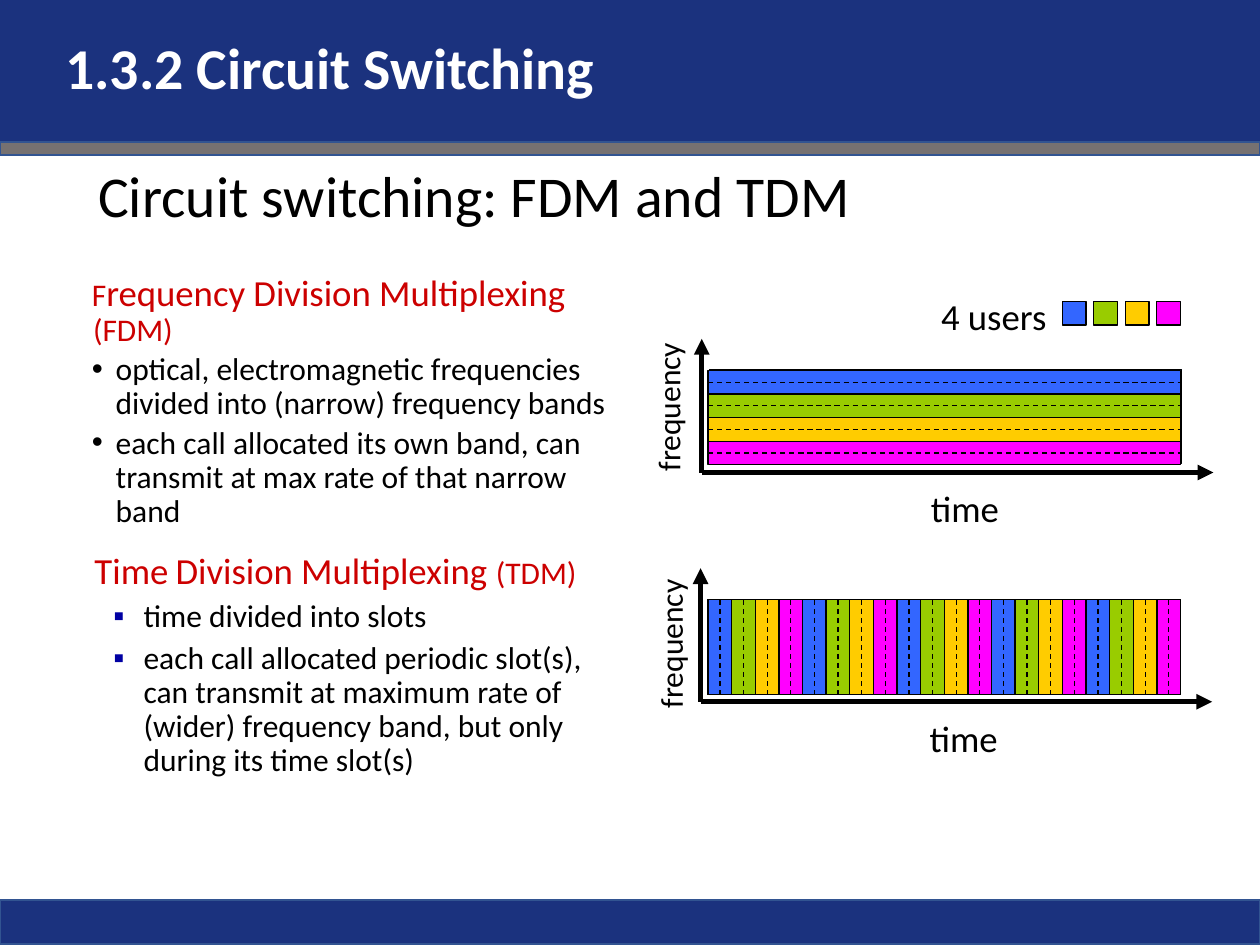
"""Build the slide that compares frequency and time division multiplexing."""
from lxml.etree import SubElement
from pptx import Presentation
from pptx.dml.color import RGBColor
from pptx.enum.dml import MSO_LINE
from pptx.enum.shapes import MSO_CONNECTOR, MSO_SHAPE
from pptx.enum.text import MSO_ANCHOR, MSO_AUTO_SIZE
from pptx.oxml.ns import qn
from pptx.util import Inches, Pt

COLORS = {
    "navy": "1B327E", "navy edge": "325491", "gray": "767171", "frame": "4472C4",
    "black": "000000", "white": "FFFFFF", "red": "CC0000", "bullet": "0000A3",
    "blue": "3366FF", "green": "99CC00", "yellow": "FFCC00", "pink": "FF00FF",
}
USERS = ["blue", "green", "yellow", "pink"]
COLUMNS, ROWS = 100, 75
PLOT_LEFT, PLOT_WIDTH, PLOT_HEIGHT = 56.2, 37.5, 7.5
SLOTS = 20


def grid(*cells):
    """Turn counts of grid cells into lengths."""
    return [Inches(cell * 10 / COLUMNS) for cell in cells]


def color(name):
    """Return the named colour."""
    return RGBColor.from_string(COLORS[name])


def add_box(shapes, place, fill, edge="black", weight=0.75):
    """Draw a filled rectangle, outlined unless edge is None."""
    shape = shapes.add_shape(MSO_SHAPE.RECTANGLE, *grid(*place))
    shape.shadow.inherit = False
    shape.fill.solid()
    shape.fill.fore_color.rgb = color(fill)
    if edge:
        shape.line.color.rgb = color(edge)
        shape.line.width = Pt(weight)
    else:
        shape.line.fill.background()
    return shape


def add_line(shapes, ends, weight=0.75, arrow=False):
    """Draw a straight black line, with an arrowhead on request."""
    connector = shapes.add_connector(MSO_CONNECTOR.STRAIGHT, *grid(*ends))
    connector.line.color.rgb = color("black")
    connector.line.width = Pt(weight)
    if arrow:
        SubElement(connector.line._get_or_add_ln(), qn("a:tailEnd"), type="triangle")
    SubElement(connector._element.spPr, qn("a:effectLst"))
    return connector


def add_runs(paragraph, runs, bold=False):
    """Add (text, size, colour) runs to a paragraph."""
    for text, size, name in runs:
        run = paragraph.add_run()
        run.text = text
        run.font.name = "Calibri"
        run.font.size = Pt(size)
        run.font.bold = bold
        run.font.color.rgb = color(name)


def add_label(shapes, place, text, size, rotation=0):
    """Add a one-line label that fits its text."""
    label = shapes.add_textbox(*grid(*place))
    label.rotation = rotation
    label.text_frame.word_wrap = False
    label.text_frame.auto_size = MSO_AUTO_SIZE.SHAPE_TO_FIT_TEXT
    add_runs(label.text_frame.paragraphs[0], [(text, size, "black")])


def add_title(slide, place, text, name, bold=False):
    """Add a vertically centred heading."""
    frame = slide.shapes.add_textbox(*grid(*place)).text_frame
    frame.word_wrap = True
    frame.vertical_anchor = MSO_ANCHOR.MIDDLE
    frame.paragraphs[0].line_spacing = 0.9
    add_runs(frame.paragraphs[0], [(text, 33, name)], bold)


def indent(paragraph, margin, hanging):
    """Give a paragraph a hanging indent."""
    properties = paragraph._p.get_or_add_pPr()
    properties.set("marL", str(Inches(margin)))
    properties.set("indent", str(-Inches(hanging)))
    return properties


def add_bullet(paragraph, symbol, name):
    """Give a paragraph a coloured bullet."""
    properties = paragraph._p.get_or_add_pPr()
    bullet_color = SubElement(properties, qn("a:buClr"))
    SubElement(bullet_color, qn("a:srgbClr"), val=COLORS[name])
    SubElement(properties, qn("a:buFont"), typeface="Arial")
    SubElement(properties, qn("a:buChar"), char=symbol)


def add_section(slide, place, heading, points, bullet, indents, gap, insets=(1, 0.5)):
    """Add a red heading with bullet points under it."""
    frame = slide.shapes.add_textbox(*grid(*place)).text_frame
    frame.word_wrap = True
    frame.margin_left = frame.margin_right = grid(insets[0])[0]
    frame.margin_top = frame.margin_bottom = grid(insets[1])[0]
    first = frame.paragraphs[0]
    first.line_spacing = 0.9
    indent(first, 0.01, 0.01)
    add_runs(first, [(text, size, "red") for text, size in heading])
    for point in points:
        paragraph = frame.add_paragraph()
        paragraph.line_spacing = 0.9
        paragraph.space_before = Pt(gap)
        indent(paragraph, *indents)
        add_bullet(paragraph, *bullet)
        add_runs(paragraph, [(point, 18, "black")])


def add_axes(shapes, left, top, frequency_place):
    """Draw the frequency and time axes with their labels."""
    base = top + 8.1
    add_line(shapes, (left, base, left, top - 2.5), 3, arrow=True)
    add_label(shapes, (*frequency_place, 12.4, 4), "frequency", 18, 270)
    add_line(shapes, (left, base, left + 40.6, base), 3, arrow=True)
    add_label(shapes, (left + 17.2, base + 0.6, 7.5, 4.5), "time", 21)


def add_shares(shapes, top, count, stacked):
    """Split the plot among the users as stacked bands or side by side slots."""
    width = PLOT_WIDTH if stacked else PLOT_WIDTH / count
    height = PLOT_HEIGHT / count if stacked else PLOT_HEIGHT
    step_x, step_y = (0, height) if stacked else (width, 0)
    corners = [(PLOT_LEFT + i * step_x, top + i * step_y) for i in range(count)]
    shares = [add_box(shapes, (x, y, width, height), USERS[i % len(USERS)])
              for i, (x, y) in enumerate(corners)]
    for x, y in corners[1:]:
        add_line(shapes, (x, y, PLOT_LEFT + PLOT_WIDTH if stacked else x,
                          y if stacked else top + PLOT_HEIGHT))
    begin_side, end_side = (1, 3) if stacked else (0, 2)
    for (x, y), share in zip(corners, shares):
        middle = add_line(shapes, (x + step_x / 2, y + step_y / 2,
                                   x + width - step_x / 2, y + height - step_y / 2))
        middle.line.dash_style = MSO_LINE.DASH
        middle.begin_connect(share, begin_side)
        middle.end_connect(share, end_side)


def add_plot(slide, top, axis_left, frequency_place, count, stacked, shift=0):
    """Draw one multiplexing plot as a group."""
    shapes = slide.shapes.add_group_shape().shapes
    add_axes(shapes, axis_left, top, frequency_place)
    add_box(shapes, (PLOT_LEFT + shift, top - shift, PLOT_WIDTH, PLOT_HEIGHT), "frame")
    add_shares(shapes, top, count, stacked)


def add_legend(slide):
    """Draw the key to the users' colours."""
    shapes = slide.shapes.add_group_shape().shapes
    add_label(shapes, (73.7, 22.8, 10.5, 4.5), "4 users", 21)
    for i, name in enumerate(USERS):
        add_box(shapes, (84.3 + 2.5 * i, 23.9, 1.9, 1.9), name)


def main():
    """Build and save the slide."""
    presentation = Presentation()
    presentation.slide_width, presentation.slide_height = grid(COLUMNS, ROWS)
    slide = presentation.slides.add_slide(presentation.slide_layouts[6])
    add_box(slide.shapes, (0, 71.4, COLUMNS, 3.5), "navy", "navy edge", 1)
    add_box(slide.shapes, (0, 0, COLUMNS, 11.3), "navy", None)
    add_box(slide.shapes, (0, 11.3, COLUMNS, 1), "gray", "navy edge", 1)
    add_title(slide, (6.8, 12.1, 86.2, 7.3), "Circuit switching: FDM and TDM", "black")
    add_plot(slide, 29.4, 55.7, (46.8, 30.2), len(USERS), stacked=True, shift=0.1)
    add_plot(slide, 47.6, 55.6, (47, 49), SLOTS, stacked=False)
    add_legend(slide)
    add_section(
        slide, (6.3, 21.3, 43.2, 23.5),
        [("F", 18), ("requency Division Multiplexing ", 21), ("(FDM)", 18)],
        ["optical, electromagnetic frequencies divided into (narrow) frequency bands",
         "each call allocated its own band, can transmit at max rate of that narrow band"],
        ("•", "black"), (0.19, 0.19), 3)
    add_section(
        slide, (6.8, 43.5, 43.3, 20.2),
        [("Time", 21), (" ", 18), ("Division Multiplexing ", 21), ("(TDM)", 18)],
        ["time divided into slots",
         "each call allocated periodic slot(s), can transmit at maximum rate of "
         "(wider) frequency band, but only during its time slot(s)"],
        ("▪", "bullet"), (0.39, 0.24), 4.5, (0.7, 0.4))
    add_title(slide, (4.2, 0, 76.7, 11.3), "1.3.2 Circuit Switching", "white", bold=True)
    presentation.save("out.pptx")


if __name__ == "__main__":
    main()
